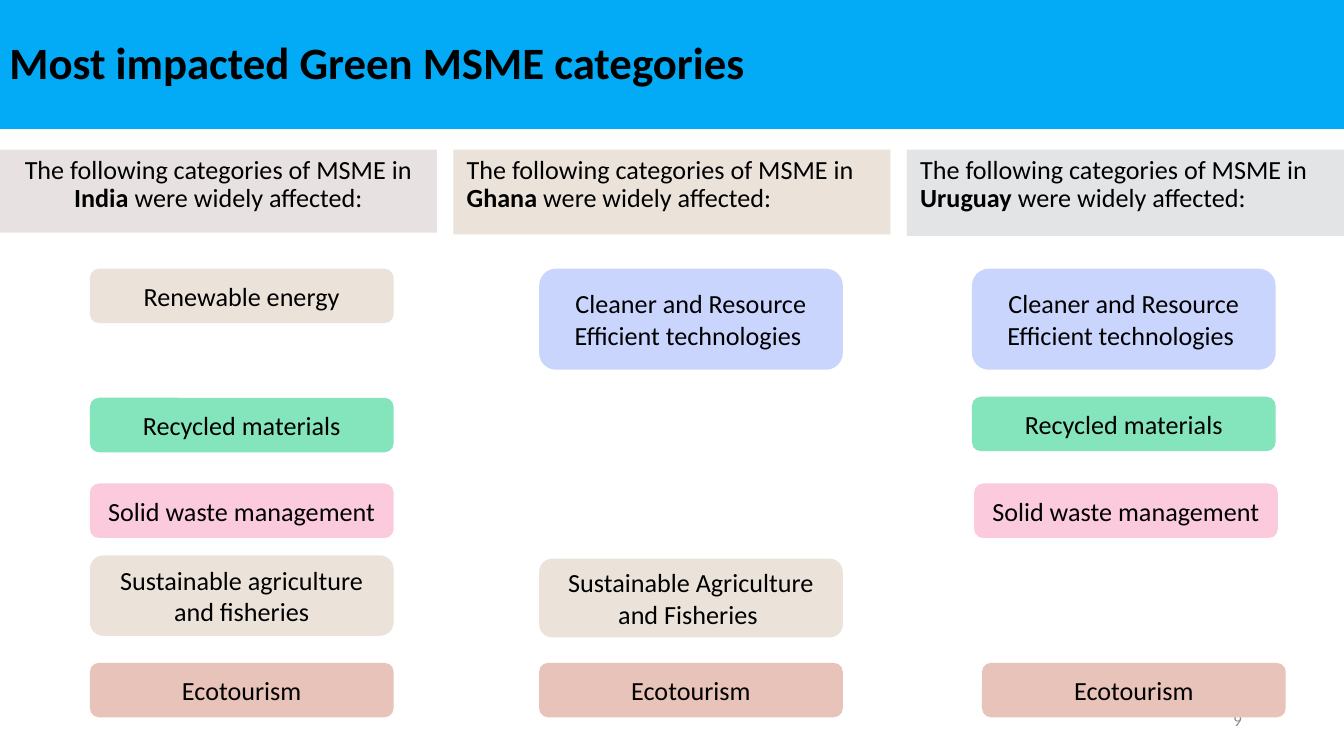
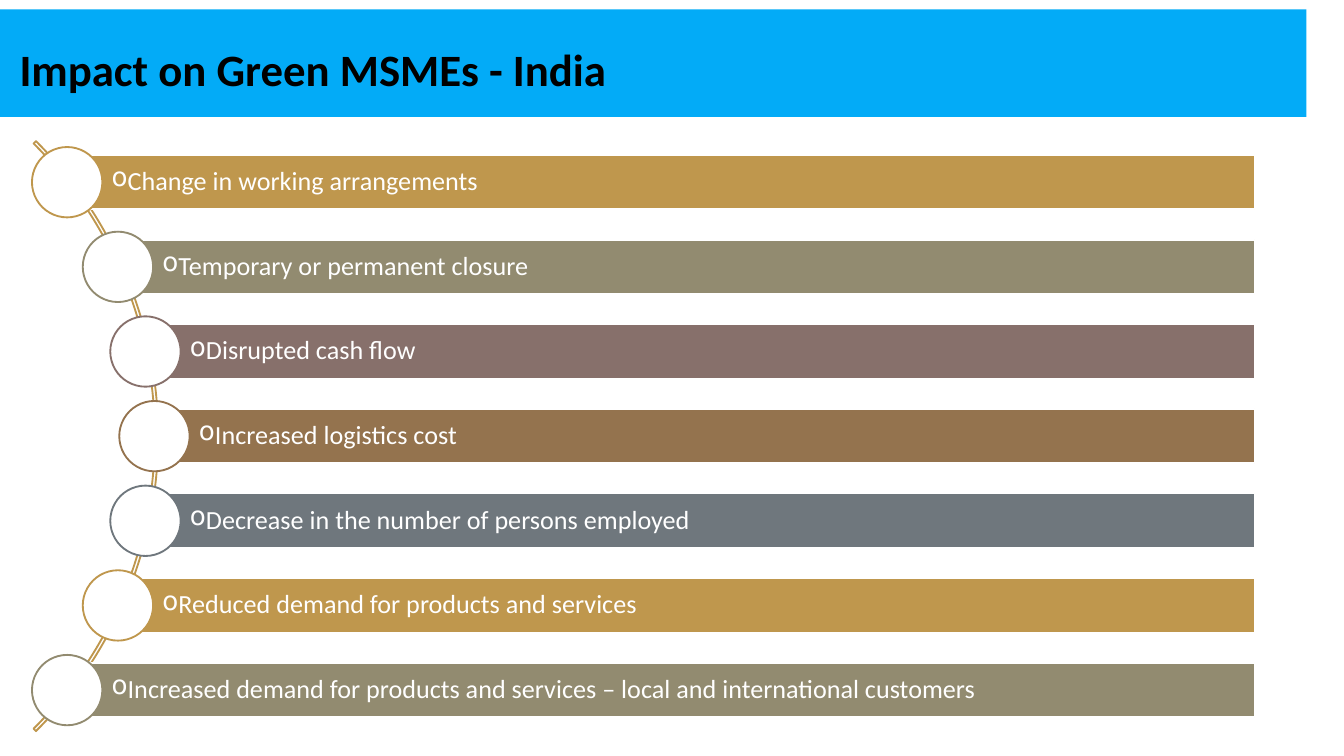
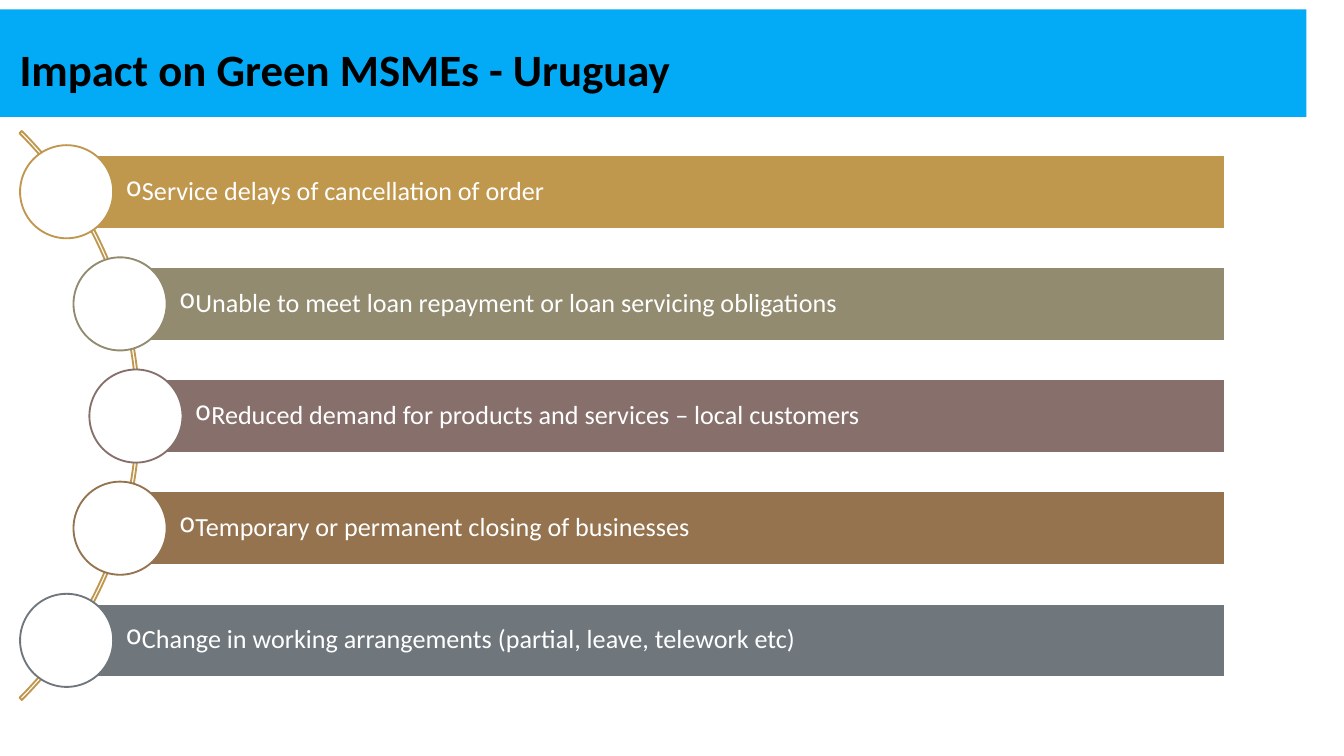
from math import sqrt

from lxml import etree
from pptx import Presentation
from pptx.dml.color import RGBColor
from pptx.enum.shapes import MSO_SHAPE
from pptx.enum.text import MSO_ANCHOR, PP_ALIGN
from pptx.oxml.ns import qn
from pptx.util import Cm, Pt

RECT = MSO_SHAPE.RECTANGLE
ROUND = MSO_SHAPE.ROUNDED_RECTANGLE
OVAL = MSO_SHAPE.OVAL
ARC = MSO_SHAPE.BLOCK_ARC
TOP = MSO_ANCHOR.TOP
MID = MSO_ANCHOR.MIDDLE
LEFT = PP_ALIGN.LEFT
CENTER = PP_ALIGN.CENTER
RIGHT = PP_ALIGN.RIGHT

FONT = "Calibri"
BLUE = "03ABF7"
BLACK = "000000"
WHITE = "FFFFFF"
GREY = "8C8C8C"
SAND = "EBE3DA"
MINT = "84E4BB"
PINK = "FBCBDD"
CORAL = "E8C3B9"
LILAC = "C9D5FD"
HUES = ["BF974D", "928B70", "87706B", "94734E", "6F777D"]
THIN = (0.18, 0.1, 0.18, 0.1)
WIDE = (0.25, 0.13, 0.25, 0.13)


def add_box(slide, kind, x, y, w, h, fill=None, line=None):
    box = slide.shapes.add_shape(kind, Cm(x), Cm(y), Cm(w), Cm(h))
    box.shadow.inherit = False
    if fill:
        box.fill.solid()
        box.fill.fore_color.rgb = RGBColor.from_string(fill)
    else:
        box.fill.background()
    if line:
        box.line.color.rgb = RGBColor.from_string(line)
        box.line.width = Pt(1)
    else:
        box.line.fill.background()
    return box


def add_text(box, runs, size, color=BLACK, align=LEFT, anchor=MID, pad=WIDE, gap=1.0):
    frame = box.text_frame
    frame.word_wrap = True
    frame.vertical_anchor = anchor
    frame.margin_left, frame.margin_top, frame.margin_right, frame.margin_bottom = map(Cm, pad)
    para = frame.paragraphs[0]
    para.alignment = align
    para.line_spacing = gap
    for text, bold in runs:
        run = para.add_run()
        run.text = text
        run.font.name = FONT
        run.font.size = Pt(size)
        run.font.bold = bold
        run.font.color.rgb = RGBColor.from_string(color)
    return para


deck = Presentation()
deck.slide_width = Cm(25.4)
deck.slide_height = Cm(14.29)
blank = deck.slide_layouts[6]

slide = deck.slides.add_slide(blank)
band = add_box(slide, RECT, 0, 0, 25.4, 2.44, BLUE)
add_text(band, [("Most impacted Green MSME categories", True)], 24, pad=THIN, gap=0.9)
page = slide.shapes.add_textbox(Cm(17.93), Cm(13.23), Cm(5.72), Cm(0.76))
add_text(page, [("9", False)], 9, GREY, RIGHT, pad=THIN)

heads = [
    ("India", 1.57, "E7E2E1", CENTER),
    ("Ghana", 1.6, SAND, LEFT),
    ("Uruguay", 1.63, "E2E4E5", LEFT),
]
for col, (land, high, fill, align) in enumerate(heads):
    head = add_box(slide, RECT, col * 8.57, 2.83, 8.26, high, fill)
    runs = [("The following categories of MSME in ", False), (land, True),
            (" were widely affected:", False)]
    para = add_text(head, runs, 14, align=align, anchor=TOP, gap=0.9)
    para.space_after = Pt(6)

cards = [
    (1.7, 5.08, 1.03, SAND, "Renewable energy"),
    (1.7, 7.52, 1.03, MINT, "Recycled materials"),
    (1.7, 9.14, 1.03, PINK, "Solid waste management"),
    (1.7, 10.5, 1.52, SAND, "Sustainable agriculture and fisheries"),
    (1.7, 12.53, 1.03, CORAL, "Ecotourism"),
    (10.19, 5.08, 1.91, LILAC, "Cleaner and Resource Efficient technologies "),
    (10.19, 10.56, 1.49, SAND, "Sustainable Agriculture and Fisheries "),
    (10.19, 12.53, 1.03, CORAL, "Ecotourism"),
    (18.37, 5.08, 1.91, LILAC, "Cleaner and Resource Efficient technologies "),
    (18.37, 7.5, 1.03, MINT, "Recycled materials"),
    (18.41, 9.14, 1.03, PINK, "Solid waste management"),
    (18.56, 12.53, 1.03, CORAL, "Ecotourism"),
]
for x, y, high, fill, text in cards:
    card = add_box(slide, ROUND, x, y, 5.74, high, fill)
    add_text(card, [(text, False)], 14, align=CENTER)

lists = [
    ("India", (-12.78, 0.36, 15.77), 2.93, 1.6, 1.03, 1.33, 23.71, 0.84, [
        "Change in working arrangements",
        "Temporary or permanent closure",
        "Disrupted cash flow",
        "Increased logistics cost",
        "Decrease in the number of persons employed",
        "Reduced demand for products and services",
        "Increased demand for products and services – local and international customers",
    ]),
    ("Uruguay", (-12.57, 0.25, 15.21), 2.93, 2.12, 1.39, 1.76, 23.16, 1.12, [
        "Service delays of cancellation of order",
        "Unable to meet loan repayment or loan servicing obligations",
        "Reduced demand for products and services – local customers",
        "Temporary or permanent closing of businesses",
        "Change in working arrangements (partial, leave, telework etc)",
    ]),
]
for land, (left, top, size), start, step, high, dot, end, inset, items in lists:
    slide = deck.slides.add_slide(blank)
    band = add_box(slide, RECT, 0, 0.18, 24.69, 2.03, BLUE)
    add_text(band, [("Impact on Green MSMEs - " + land, True)], 24,
             anchor=TOP, pad=(0.37, 0.1, 0.18, 0.1), gap=1.5)
    arc = add_box(slide, ARC, left, top, size, size, line=HUES[0])
    for i, turn in enumerate((189, 27, 0.004)):
        arc.adjustments[i] = turn
    reach = size / 2 - 0.07
    for row, text in enumerate(items):
        hue = HUES[row % len(HUES)]
        y = start + row * step
        drop = (row - (len(items) - 1) / 2) * step
        x = round(left + size / 2 + sqrt(reach ** 2 - drop ** 2), 2)
        bar = add_box(slide, RECT, x, y, end - x, high, hue, WHITE)
        para = add_text(bar, [], 14, pad=(inset, 0.1, 0.1, 0.1), gap=0.9)
        mark = etree.SubElement(para._p.get_or_add_pPr(), qn("a:buChar"))
        mark.set("char", "o")
        add_text(bar, [(text, False)], 14, WHITE, pad=(inset, 0.1, 0.1, 0.1), gap=0.9)
        add_box(slide, OVAL, x - dot / 2, y + (high - dot) / 2, dot, dot, WHITE, hue)

deck.save("out.pptx")
